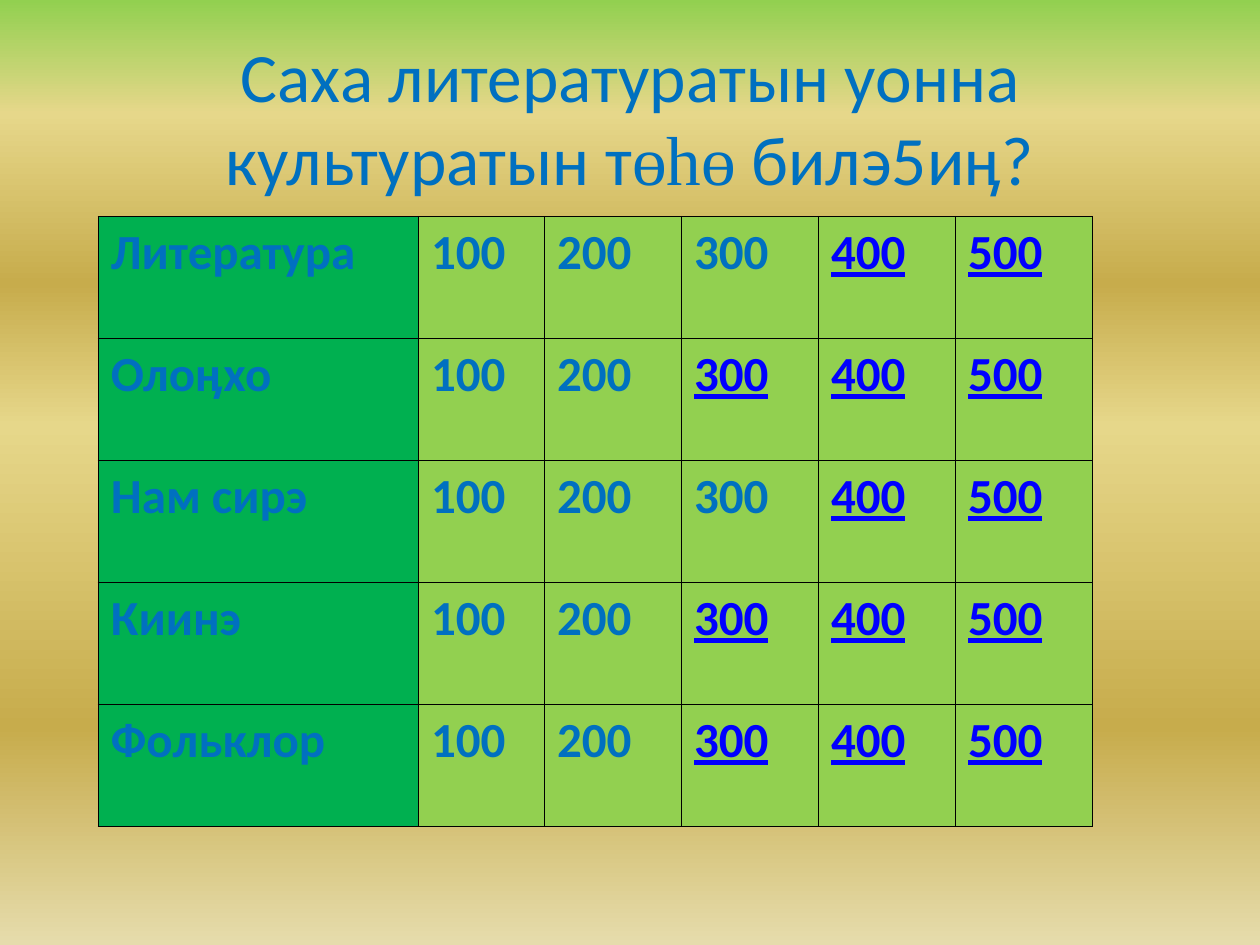
"""Build a quiz board slide on Sakha literature and culture."""
from dataclasses import dataclass

from lxml import etree
from pptx import Presentation
from pptx.dml.color import RGBColor
from pptx.enum.text import MSO_ANCHOR, MSO_AUTO_SIZE, PP_ALIGN
from pptx.oxml.ns import qn
from pptx.slide import Slide
from pptx.table import _Cell
from pptx.util import Pt

MIDDLE = MSO_ANCHOR.MIDDLE
NO_FIT = MSO_AUTO_SIZE.NONE
CENTER = PP_ALIGN.CENTER

HEX = {
    "text": "0070C0",
    "link": "0000FF",
    "topic": "00B050",
    "score": "92D050",
    "line": "000000",
}
STOPS = [(0, "92D050"), (12, "E6D78A"), (30, "C7AC4C"),
         (45, "E6D78A"), (77, "C7AC4C"), (100, "E6DCAC")]
TITLE = [("Саха литературатын уонна культуратын т", "Calibri"),
         ("өhө", "Times New Roman"),
         (" билэ5иӊ?", "Calibri")]
SCORES = [100, 200, 300, 400, 500]
WIDTHS = [182.9, 72, 78.3, 78.3, 78.3, 78.3]
HEIGHT = 69.7


@dataclass
class Topic:
    name: str
    first: int


TOPICS = [
    Topic("Литература", 400),
    Topic("Олоӊхо", 300),
    Topic("Нам сирэ", 400),
    Topic("Киинэ", 300),
    Topic("Фольклор", 300),
]


def color(key: str) -> RGBColor:
    return RGBColor.from_string(HEX[key])


def paint(slide: Slide) -> None:
    fill = slide.background.fill
    fill.gradient()
    fill.gradient_angle = 270
    stops = next(slide.element.iter(qn("a:gsLst")))
    for stop in list(stops):
        stops.remove(stop)
    for place, code in STOPS:
        stop = etree.SubElement(stops, qn("a:gs"), pos=str(place * 1000))
        etree.SubElement(stop, qn("a:srgbClr"), val=code)


def add_title(slide: Slide) -> None:
    title = slide.shapes.title
    title.left, title.top = Pt(36), Pt(21.6)
    title.width, title.height = Pt(648), Pt(90)
    frame = title.text_frame
    frame.auto_size = NO_FIT
    frame.vertical_anchor = MIDDLE
    para = frame.paragraphs[0]
    para.alignment = CENTER
    para.font.size = Pt(39.6)
    para.font.color.rgb = color("text")
    for text, face in TITLE:
        run = para.add_run()
        run.text = text
        run.font.name = face


def add_edges(cell: _Cell) -> None:
    props = cell._tc.get_or_add_tcPr()
    for side in ("lnL", "lnR", "lnT", "lnB"):
        edge = etree.SubElement(props, qn(f"a:{side}"), w=str(Pt(1)))
        fill = etree.SubElement(edge, qn("a:solidFill"))
        etree.SubElement(fill, qn("a:srgbClr"), val=HEX["line"])


def fill_cell(cell: _Cell, text: str, back: str, link: bool = False) -> None:
    add_edges(cell)
    cell.fill.solid()
    cell.fill.fore_color.rgb = color(back)
    cell.text = text
    font = cell.text_frame.paragraphs[0].font
    font.name, font.size, font.bold = "Calibri", Pt(28), True
    font.underline = link
    font.color.rgb = color("link" if link else "text")


def add_board(slide: Slide) -> None:
    board = slide.shapes.add_table(
        len(TOPICS), len(WIDTHS), Pt(56.2), Pt(123.8),
        Pt(sum(WIDTHS)), Pt(HEIGHT * len(TOPICS))).table
    for column, width in zip(board.columns, WIDTHS):
        column.width = Pt(width)
    for row, topic in zip(board.rows, TOPICS):
        row.height = Pt(HEIGHT)
        head, *cells = row.cells
        fill_cell(head, topic.name, "topic")
        for cell, score in zip(cells, SCORES):
            fill_cell(cell, str(score), "score", score >= topic.first)


def main() -> None:
    deck = Presentation()
    deck.slide_width, deck.slide_height = Pt(720), Pt(540)
    slide = deck.slides.add_slide(deck.slide_layouts[5])
    paint(slide)
    add_title(slide)
    add_board(slide)
    deck.save("out.pptx")


if __name__ == "__main__":
    main()
